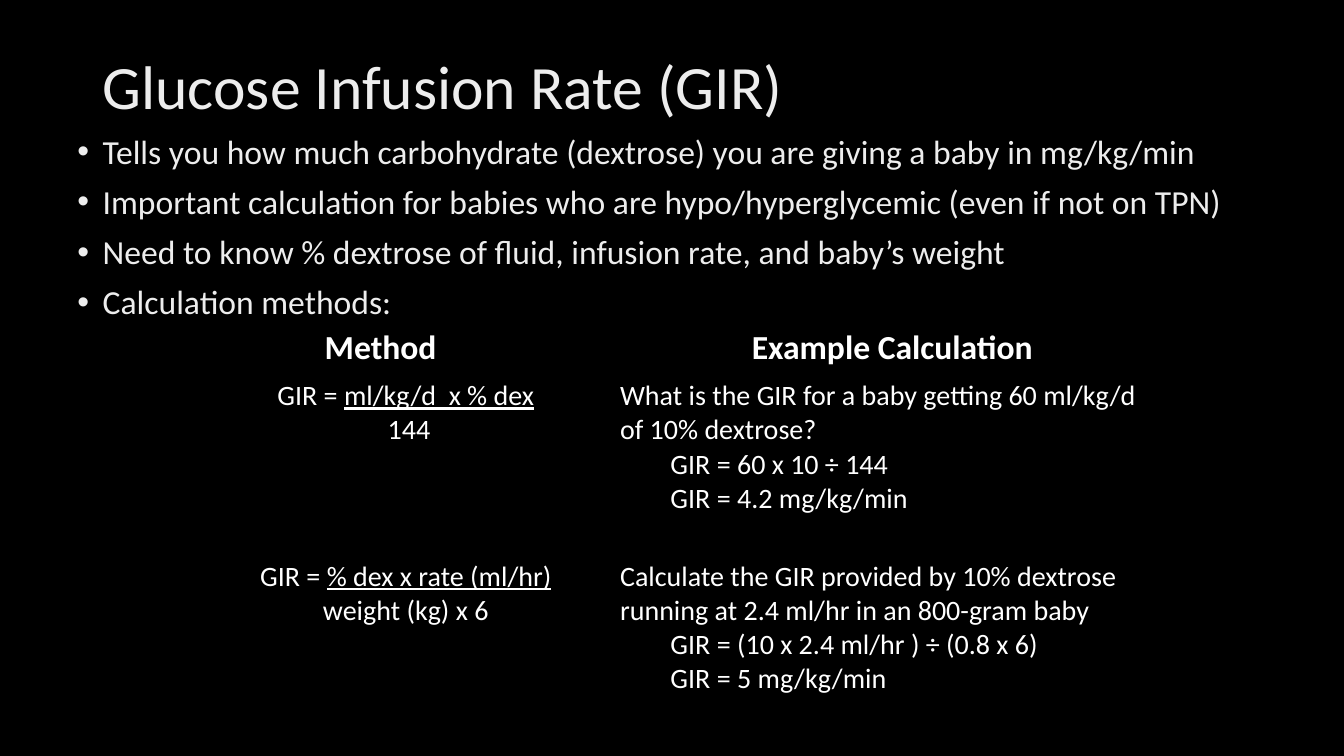
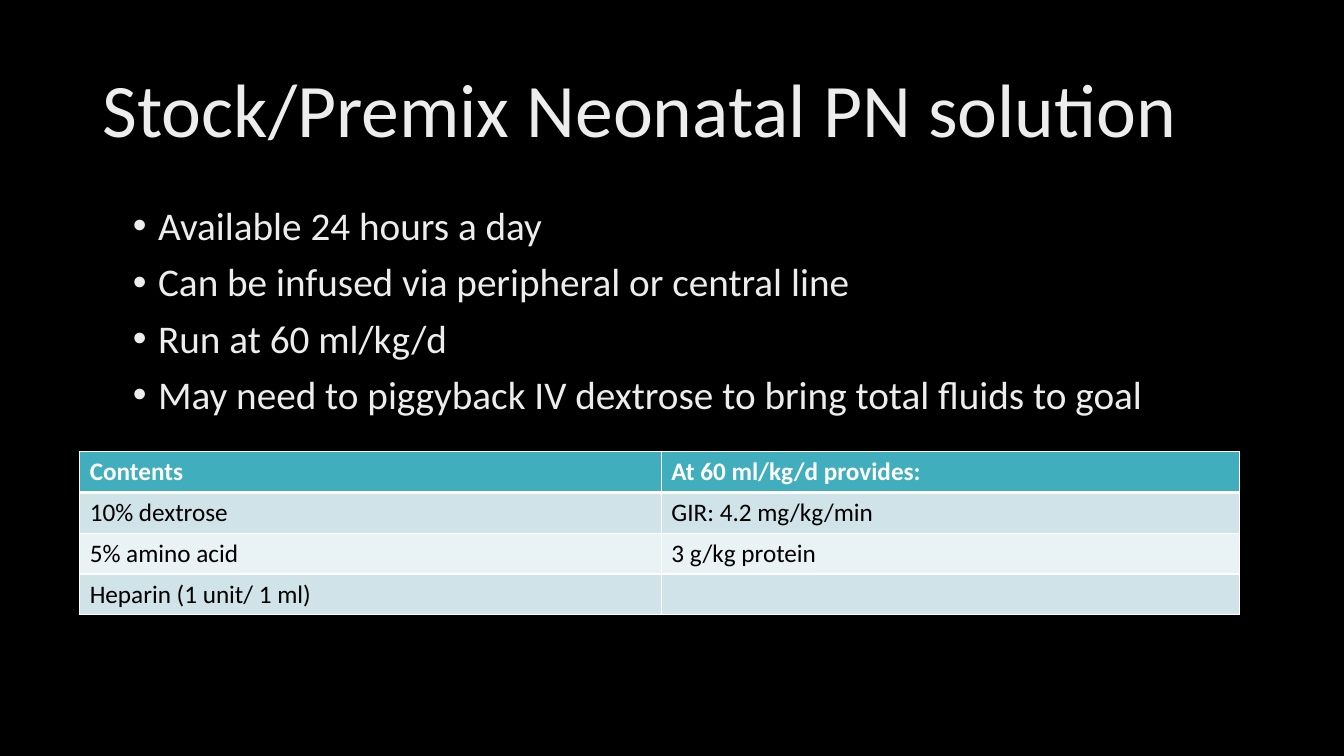
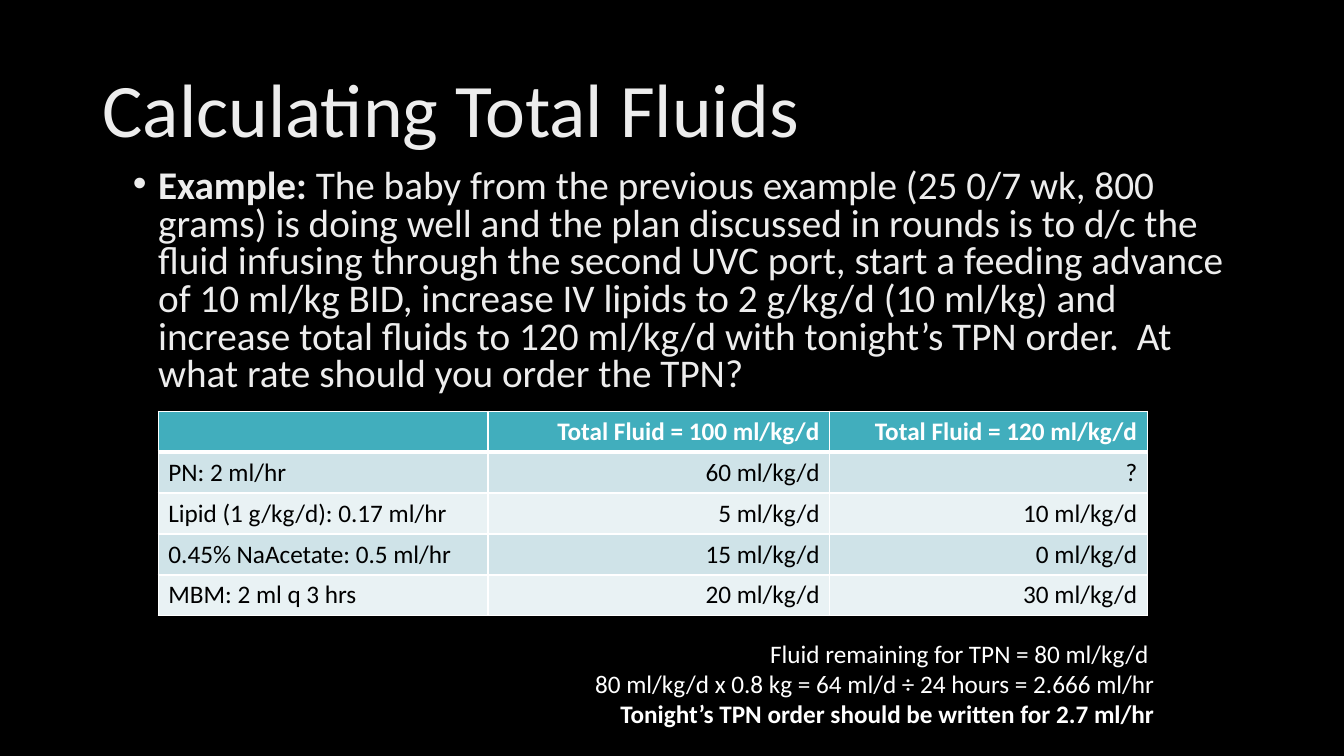
"""Build three slides on neonatal glucose rates and fluid totals."""
from dataclasses import dataclass

from lxml import etree
from pptx import Presentation
from pptx import util as u
from pptx.dml.color import RGBColor
from pptx.enum import text
from pptx.oxml import ns

CENTER, RIGHT = text.PP_ALIGN.CENTER, text.PP_ALIGN.RIGHT
PLAIN_TABLE = "{2D5ABB26-0587-4C30-8999-92F81FD0307C}"


@dataclass(frozen=True)
class Theme:
    font: str = "Calibri"
    back: str = "000000"
    soft: str = "EDEDED"
    white: str = "FFFFFF"
    dark: str = "000000"
    header: str = "41AEBD"
    bands: tuple = ("CFE3E8", "E9F2F4")
    title: int = 54
    title_small: int = 44
    body: int = 28
    body_small: int = 24
    formula: int = 20
    table: int = 18


def write(p, runs, size=18, color="FFFFFF", bold=False, align=None,
          indent=0, bullet=False, spacing=None, before=0):
    pPr = p._p.get_or_add_pPr()
    if bullet:
        indent += 0.25
        pPr.set("indent", str(-u.Inches(0.25)))
        etree.SubElement(pPr, ns.qn("a:buFont")).set("typeface", "Arial")
        etree.SubElement(pPr, ns.qn("a:buChar")).set("char", "•")
    if indent:
        pPr.set("marL", str(u.Inches(indent)))
    if align is not None:
        p.alignment = align
    if spacing:
        p.line_spacing = spacing
    if before:
        p.space_before = u.Pt(before)
    for words, mark in [(runs, "")] if isinstance(runs, str) else runs:
        r = p.add_run()
        r.text = words
        r.font.name = Theme.font
        r.font.size = u.Pt(size)
        r.font.color.rgb = RGBColor.from_string(color)
        r.font.bold = bold or mark == "b"
        r.font.underline = mark == "u"


def border(cell, side, width):
    ln = etree.SubElement(cell._tc.get_or_add_tcPr(), ns.qn("a:ln" + side))
    ln.set("w", str(u.Pt(width)))
    fill = etree.SubElement(ln, ns.qn("a:solidFill"))
    etree.SubElement(fill, ns.qn("a:srgbClr")).set("val", Theme.white)


class Deck:
    def __init__(self, theme):
        self.theme = theme
        self.prs = Presentation()
        self.prs.slide_width = u.Inches(13.33)
        self.prs.slide_height = u.Inches(7.5)
        self.s = None

    def slide(self, title, size=Theme.title, height=1.45):
        self.s = self.prs.slides.add_slide(self.prs.slide_layouts[6])
        fill = self.s.background.fill
        fill.solid()
        fill.fore_color.rgb = RGBColor.from_string(self.theme.back)
        tf = self.box((0.92, 0.4, 11.5, height), [title], size=size,
                      color=self.theme.soft, spacing=0.9)
        tf.vertical_anchor = text.MSO_ANCHOR.MIDDLE

    def box(self, at, paragraphs, before=0, **style):
        tf = self.s.shapes.add_textbox(*map(u.Inches, at)).text_frame
        tf.word_wrap = True
        for i, runs in enumerate(paragraphs):
            p = tf.add_paragraph() if i else tf.paragraphs[0]
            write(p, runs, before=before if i else 0, **style)
        return tf

    def bullets(self, at, items, size=Theme.body, spacing=0.9):
        self.box(at, items, before=10, size=size, color=self.theme.soft,
                 bullet=True, spacing=spacing)

    def table(self, left, top, cols, rows):
        at = map(u.Inches, (left, top, sum(cols), sum(rows)))
        tbl = self.s.shapes.add_table(len(rows), len(cols), *at).table
        tbl.horz_banding = tbl.first_row = False
        tbl._tbl.tblPr.find(ns.qn("a:tableStyleId")).text = PLAIN_TABLE
        for line, sizes in ((tbl.columns, cols), (tbl.rows, rows)):
            for part, size in zip(line, sizes):
                if line is tbl.columns:
                    part.width = u.Inches(size)
                else:
                    part.height = u.Inches(size)
        return tbl

    def formulas(self, left, top, cols, rows, heads, examples):
        tbl = self.table(left, top, cols, rows)
        for c, head in enumerate(heads):
            write(tbl.cell(0, c).text_frame.paragraphs[0], head, bold=True,
                  size=self.theme.body_small, align=CENTER)
        for r, pair in enumerate(examples, 1):
            for c, lines in enumerate(pair):
                tf = tbl.cell(r, c).text_frame
                for i, runs in enumerate(lines):
                    p = tf.add_paragraph() if i else tf.paragraphs[0]
                    write(p, runs, size=self.theme.formula,
                          align=None if c else CENTER,
                          indent=0.5 if i or not c else 0)

    def banded(self, left, top, cols, height, data, align=None):
        th = self.theme
        tbl = self.table(left, top, cols, [height / len(data)] * len(data))
        for r, row in enumerate(data):
            for c, words in enumerate(row):
                cell = tbl.cell(r, c)
                for side in "LRTB":
                    thick = (r, side) in ((0, "B"), (1, "T"))
                    border(cell, side, 3 if thick else 1)
                cell.fill.solid()
                cell.fill.fore_color.rgb = RGBColor.from_string(
                    th.bands[(r - 1) % 2] if r else th.header)
                if words:
                    write(cell.text_frame.paragraphs[0], words,
                          size=th.table, bold=r == 0,
                          color=th.dark if r else th.white,
                          align=align if c else None)


def main():
    th = Theme()
    deck = Deck(th)

    deck.slide("Glucose Infusion Rate (GIR)", th.title_small, 0.97)
    deck.bullets((0.67, 1.29, 11.68, 2.09), [
        "Tells you how much carbohydrate (dextrose) you are giving a baby in mg/kg/min",
        "Important calculation for babies who are hypo/hyperglycemic (even if not on TPN)",
        "Need to know % dextrose of fluid, infusion rate, and baby’s weight",
        "Calculation methods:",
    ], size=th.body_small)
    deck.formulas(1.5, 3.2, [4.55, 5.6], [0.51, 1.79, 1.74],
                  ["Method", "Example Calculation"], [
        ([[("GIR = ", ""), ("ml/kg/d  x % dex", "u")], " 144"],
         ["What is the GIR for a baby getting 60 ml/kg/d of 10% dextrose?",
          "GIR = 60 x 10 ÷ 144",
          "GIR = 4.2 mg/kg/min"]),
        ([[("GIR = ", ""), ("% dex x rate (ml/hr)", "u")], "weight (kg) x 6"],
         ["Calculate the GIR provided by 10% dextrose running at 2.4 ml/hr in an 800-gram baby",
          "GIR = (10 x 2.4 ml/hr ) ÷ (0.8 x 6)",
          "GIR = 5 mg/kg/min"]),
    ])

    deck.slide("Stock/Premix Neonatal PN solution")
    deck.bullets((1.22, 2, 11.19, 2.29), [
        "Available 24 hours a day",
        "Can be infused via peripheral or central line",
        "Run at 60 ml/kg/d",
        "May need to piggyback IV dextrose to bring total fluids to goal",
    ])
    deck.banded(0.79, 4.48, [5.77, 5.73], 1.62, [
        ("Contents", "At 60 ml/kg/d provides:"),
        ("10% dextrose", "GIR: 4.2 mg/kg/min"),
        ("5% amino acid", "3 g/kg protein"),
        ("Heparin (1 unit/ 1 ml)", ""),
    ])

    deck.slide("Calculating Total Fluids")
    deck.bullets((1.22, 1.63, 11.19, 2.55), [[
        ("Example: ", "b"),
        ("The baby from the previous example (25 0/7 wk, 800 grams) is doing "
         "well and the plan discussed in rounds is to d/c the fluid infusing "
         "through the second UVC port, start a feeding advance of 10 ml/kg "
         "BID, increase IV lipids to 2 g/kg/d (10 ml/kg) and increase total "
         "fluids to 120 ml/kg/d with tonight’s TPN order.  At what rate "
         "should you order the TPN?", ""),
    ]], spacing=0.8)
    deck.banded(1.57, 4.08, [3.27, 3.39, 3.15], 2.03, [
        ("", "Total Fluid = 100 ml/kg/d", "Total Fluid = 120 ml/kg/d"),
        ("PN: 2 ml/hr", "60 ml/kg/d", "?"),
        ("Lipid (1 g/kg/d): 0.17 ml/hr", "5 ml/kg/d", "10 ml/kg/d"),
        ("0.45% NaAcetate: 0.5 ml/hr", "15 ml/kg/d", "0 ml/kg/d"),
        ("MBM: 2 ml q 3 hrs", "20 ml/kg/d", "30 ml/kg/d"),
    ], align=RIGHT)
    deck.box((4.88, 6.28, 6.67, 1.01), [
        "Fluid remaining for TPN = 80 ml/kg/d ",
        "80 ml/kg/d x 0.8 kg = 64 ml/d ÷ 24 hours = 2.666 ml/hr",
        [("Tonight’s TPN order should be written for 2.7 ml/hr", "b")],
    ], size=th.table, color=th.white, align=RIGHT, indent=0.5)

    deck.prs.save("out.pptx")


if __name__ == "__main__":
    main()
